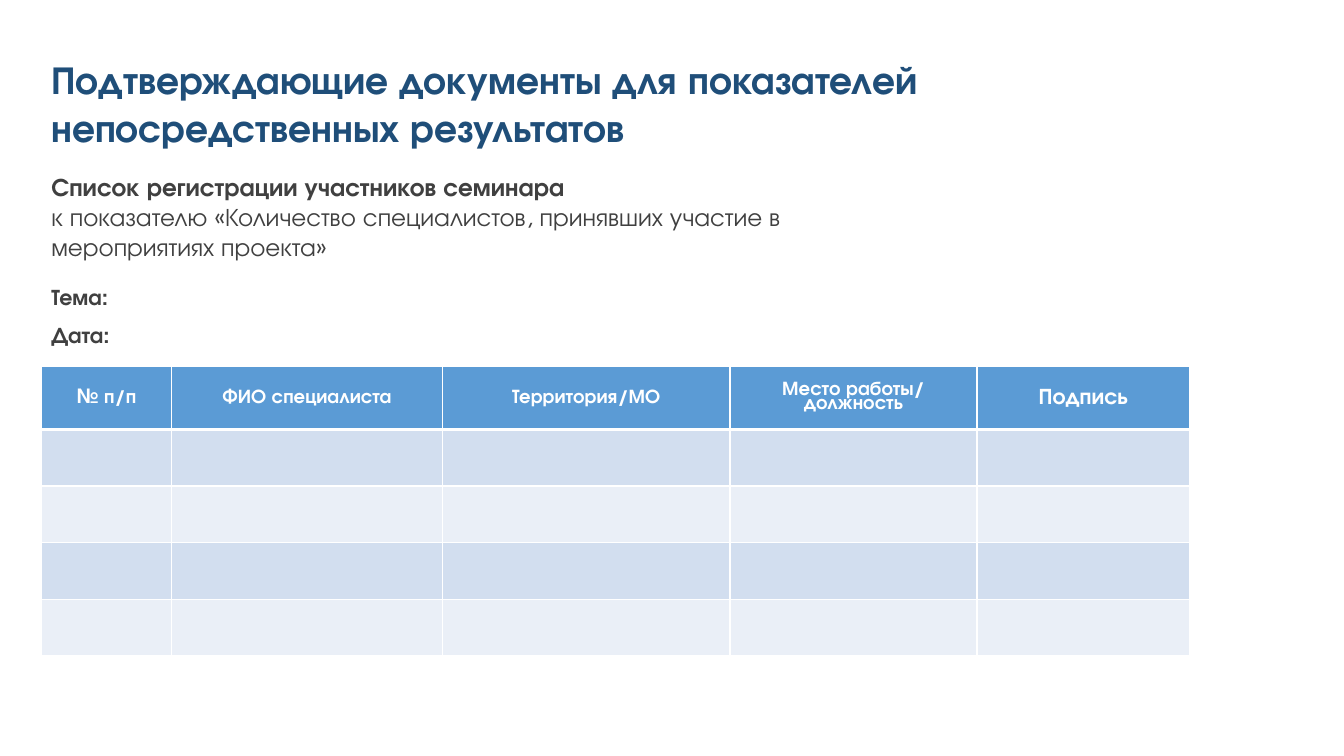
"""Builds the slide with the seminar sign-in sheet."""
import dataclasses
import typing

import lxml.etree
import pptx
import pptx.dml.color
import pptx.enum.text
import pptx.oxml.ns
import pptx.util

RGBColor = pptx.dml.color.RGBColor
ANCHOR = pptx.enum.text.MSO_ANCHOR
ALIGN = pptx.enum.text.PP_ALIGN

NAVY = RGBColor(0x1F, 0x4E, 0x79)
GREY = RGBColor(0x40, 0x40, 0x40)
WHITE = RGBColor(0xFF, 0xFF, 0xFF)
BLUE = RGBColor(0x5B, 0x9B, 0xD5)
BANDS = (RGBColor(0xD2, 0xDE, 0xEF), RGBColor(0xEA, 0xEF, 0xF7))

FONT = "TeX Gyre Adventor"
WIDTH = pptx.util.Inches(13.33)
HEIGHT = pptx.util.Inches(7.5)
LEFT = 3.08
TOP = 48.53
HEAD_ROW = 8.27
BODY_ROW = 7.5
BODY_COUNT = 4


@dataclasses.dataclass
class Line:
    text: str
    size: float
    color: RGBColor = GREY
    bold: bool = True
    before: float = 0
    spacing: float = 1


@dataclasses.dataclass
class Block:
    top: float
    width: float
    height: float
    anchor: ANCHOR
    lines: list[Line]


@dataclasses.dataclass
class Column:
    width: float
    title: str
    size: float = 14
    spacing: float = 1


BLOCKS = [
    Block(7.07, 76.37, 13.07, ANCHOR.MIDDLE, [
        Line("Подтверждающие документы для показателей\vнепосредственных результатов", 28, NAVY),
    ]),
    Block(22, 64.52, 13.47, ANCHOR.TOP, [
        Line("Список регистрации участников семинара", 18),
        Line("к показателю «Количество специалистов, принявших участие в мероприятиях проекта»",
             18, bold=False),
    ]),
    Block(36.27, 64.52, 11.33, ANCHOR.MIDDLE, [
        Line("Тема:", 16, spacing=0.9),
        Line("Дата:", 16, before=10, spacing=0.9),
    ]),
]

COLUMNS = [
    Column(9.68, "№ п/п"),
    Column(20.18, "ФИО специалиста"),
    Column(21.38, "Территория/МО"),
    Column(18.38, "Место работы/\nдолжность", spacing=0.8),
    Column(15.83, "Подпись", 16),
]


def cols(share: float) -> int:
    """Turn hundredths of the slide width into a length."""
    return round(WIDTH * share / 100)


def rows(share: float) -> int:
    """Turn hundredths of the slide height into a length."""
    return round(HEIGHT * share / 100)


def put_text(para: typing.Any, text: str, *, size: float, color: RGBColor,
             bold: bool = True, align: ALIGN = ALIGN.LEFT,
             before: float = 0, spacing: float = 1) -> None:
    """Write text into a paragraph and format it."""
    para.text = text
    para.alignment = align
    para.space_before = pptx.util.Pt(before)
    para.line_spacing = spacing
    for run in para.runs:
        run.font.name = FONT
        run.font.size = pptx.util.Pt(size)
        run.font.bold = bold
        run.font.color.rgb = color


def draw_block(slide: typing.Any, block: Block) -> None:
    """Draw one text box with its lines."""
    box = slide.shapes.add_textbox(cols(LEFT), rows(block.top),
                                   cols(block.width), rows(block.height))
    frame = box.text_frame
    frame.word_wrap = True
    frame.vertical_anchor = block.anchor
    for i, line in enumerate(block.lines):
        para = frame.add_paragraph() if i else frame.paragraphs[0]
        put_text(para, line.text, size=line.size, color=line.color, bold=line.bold,
                 before=line.before, spacing=line.spacing)


def style_cell(cell: typing.Any, fill: RGBColor, top: float, base: float) -> None:
    """Give a cell white borders and a solid fill."""
    props = cell._tc.get_or_add_tcPr()
    for side, width in (("L", 1), ("R", 1), ("T", top), ("B", base)):
        edge = lxml.etree.SubElement(props, pptx.oxml.ns.qn(f"a:ln{side}"),
                                     w=str(pptx.util.Pt(width)))
        solid = lxml.etree.SubElement(edge, pptx.oxml.ns.qn("a:solidFill"))
        lxml.etree.SubElement(solid, pptx.oxml.ns.qn("a:srgbClr"), val=str(WHITE))
    cell.fill.solid()
    cell.fill.fore_color.rgb = fill
    cell.vertical_anchor = ANCHOR.MIDDLE


def draw_table(slide: typing.Any) -> None:
    """Draw the sign-in table with its empty rows."""
    width = sum(col.width for col in COLUMNS)
    height = HEAD_ROW + BODY_ROW * BODY_COUNT
    table = slide.shapes.add_table(BODY_COUNT + 1, len(COLUMNS), cols(LEFT), rows(TOP),
                                   cols(width), rows(height)).table
    for r, row in enumerate(table.rows):
        row.height = rows(BODY_ROW if r else HEAD_ROW)
        fill = BANDS[(r - 1) % 2] if r else BLUE
        for cell in row.cells:
            style_cell(cell, fill, 3 if r == 1 else 1, 1 if r else 3)
    for c, col in enumerate(COLUMNS):
        table.columns[c].width = cols(col.width)
        frame = table.cell(0, c).text_frame
        for i, text in enumerate(col.title.split("\n")):
            para = frame.add_paragraph() if i else frame.paragraphs[0]
            put_text(para, text, size=col.size, color=WHITE,
                     align=ALIGN.CENTER, spacing=col.spacing)


def main() -> None:
    """Build the slide and save it."""
    deck = pptx.Presentation()
    deck.slide_width = WIDTH
    deck.slide_height = HEIGHT
    slide = deck.slides.add_slide(deck.slide_layouts[6])
    for block in BLOCKS:
        draw_block(slide, block)
    draw_table(slide)
    deck.save("out.pptx")


if __name__ == "__main__":
    main()
